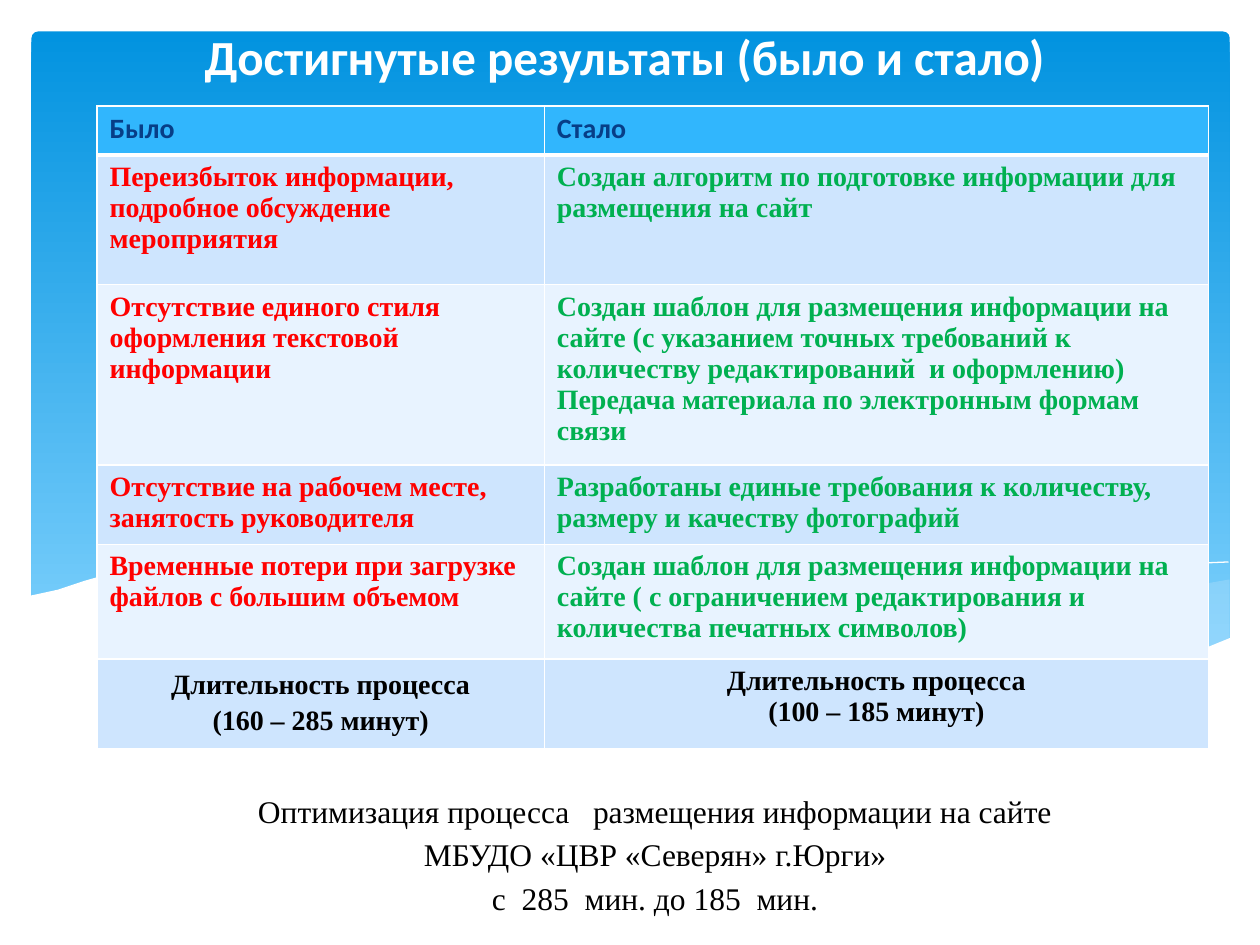
from collections import namedtuple

from lxml.etree import SubElement
from pptx import Presentation
from pptx.dml.color import RGBColor
from pptx.enum.shapes import MSO_SHAPE
from pptx.enum.text import MSO_ANCHOR, PP_ALIGN
from pptx.oxml import parse_xml
from pptx.oxml.ns import nsdecls, qn
from pptx.util import Inches, Pt

Box = namedtuple("Box", "left top width height")

SLIDE_WIDTH, SLIDE_HEIGHT = Inches(10), Inches(7.5)
GRID = SLIDE_WIDTH / 100
SERIF, SANS = "Times New Roman", "Calibri"
WHITE, BLACK, RED, GREEN, NAVY = "FFFFFF", "000000", "FF0000", "00B050", "073E87"
HEADER_FILL, ROW_FILLS = "31B6FD", ("CEE5FE", "E8F3FF")

RIGHT_WAVE = [(95, 43.5), (91, 44.2), (83.6, 45.8), (72.8, 48.3), (63.6, 50),
              (70.7, 50.9), (78.9, 51.3), (87.2, 50.5), (92.4, 49.2), (95.1, 48.2),
              (95.1, 43.5)]
MIDDLE_WAVE = [(86.8, 50.8), (78.2, 49.5), (68.1, 47.5), (60.4, 45.7), (50.3, 43.5),
               (41.7, 42.4), (33.6, 42.1), (26.1, 42.7), (33.7, 43.8), (42.4, 45.7),
               (54.1, 48.4), (62.5, 49.9), (71.1, 50.8), (78.2, 51.4), (83.2, 51.2)]
FALLING_LINE = [(28.4, 43.1), (33.8, 42.3), (40.8, 42.2), (48.5, 42.9), (58.3, 44.3),
                (70.2, 46.1), (80.6, 48.6), (88.2, 50.7)]
RISING_LINE = [(58.8, 49.2), (67, 47.1), (78.1, 44.5), (85.6, 43.1), (92.6, 42.2),
               (95, 42.1)]
WHITE_WAVE = [(95.2, 48.1), (92.5, 49.2), (88.5, 50.2), (83.8, 50.9), (78.4, 51.2),
              (71.9, 50.9), (64.3, 50), (55.4, 48.5), (42.2, 45.5), (34, 43.7),
              (26.7, 42.6), (20.5, 42), (15.2, 41.9), (10.7, 42.1), (7, 42.8),
              (4.2, 43.6), (2.1, 44.3), (-0.2, 44.8), (-0.2, 56.4), (95.2, 56.4)]

COMPARISON = [
    ("Переизбыток информации, подробное обсуждение мероприятия",
     "Создан алгоритм по подготовке информации для размещения на сайт"),
    ("Отсутствие единого стиля оформления текстовой информации",
     "Создан шаблон для размещения информации на сайте (с указанием точных требований "
     "к количеству редактирований  и оформлению) Передача материала по электронным "
     "формам связи"),
    ("Отсутствие на рабочем месте,  занятость руководителя",
     "Разработаны единые требования к количеству, размеру и качеству фотографий"),
    ("Временные потери при загрузке  файлов с большим объемом",
     "Создан шаблон для размещения информации на сайте ( с ограничением редактирования "
     "и количества печатных символов)"),
]
DURATIONS = ("Длительность процесса\n(160 – 285 минут)",
             "Длительность процесса\n(100 – 185 минут)")
CONCLUSION = ("Оптимизация процесса   размещения информации на сайте\n"
              "МБУДО «ЦВР «Северян» г.Юрги»\n"
              "с  285  мин. до 185  мин.")


def rgb(color):
    return RGBColor.from_string(color)


def units(count):
    return round(count * GRID)


def write(frame, text, size, font, color, bold=False, align=PP_ALIGN.LEFT, spacing=None):
    frame.text = text
    frame.word_wrap = True
    for paragraph in frame.paragraphs:
        paragraph.alignment = align
        paragraph.line_spacing = spacing
        paragraph.font.size = Pt(size)
        paragraph.font.name = font
        paragraph.font.bold = bold
        paragraph.font.color.rgb = rgb(color)


def add_wave(slide, box, points, fill=None, opacity=100):
    (start, *rest) = [(units(box.left + x), units(box.top + y)) for x, y in points]
    builder = slide.shapes.build_freeform(*start)
    builder.add_line_segments(rest, close=fill is not None)
    wave = builder.convert_to_shape()
    wave.shadow.inherit = False
    if fill is None:
        wave.fill.background()
        wave.line.color.rgb = rgb(WHITE)
        wave.line.width = Pt(0)
        return
    wave.line.fill.background()
    wave.fill.solid()
    wave.fill.fore_color.rgb = rgb(fill)
    if opacity < 100:
        color = wave.fill._xPr.find(qn("a:solidFill"))[0]
        SubElement(color, qn("a:alpha"), val=str(opacity * 1000))


def add_backdrop(slide, box):
    panel = slide.shapes.add_shape(MSO_SHAPE.ROUNDED_RECTANGLE, *map(units, box))
    panel.adjustments[0] = 0.01
    panel.shadow.inherit = False
    panel.line.fill.background()
    panel.fill.gradient()
    panel.fill.gradient_angle = 270
    for stop, color, position in zip(panel.fill.gradient_stops, ("0293E0", "83D3FE"), (0, 1)):
        stop.color.rgb = rgb(color)
        stop.position = position
    add_wave(slide, box, RIGHT_WAVE, "C6E7FC", 29)
    add_wave(slide, box, MIDDLE_WAVE, "C6E7FC", 40)
    add_wave(slide, box, FALLING_LINE)
    add_wave(slide, box, RISING_LINE)
    add_wave(slide, box, WHITE_WAVE, WHITE)


def place_title(slide, box):
    title = slide.shapes.title
    title.left, title.top, title.width, title.height = map(units, box)
    write(title.text_frame, "Достигнутые результаты (было и стало) ", 28, SANS, WHITE,
          bold=True, align=PP_ALIGN.CENTER)
    title.text_frame.vertical_anchor = MSO_ANCHOR.MIDDLE
    title._element.getparent().append(title._element)


def format_cell(cell, fill, bottom_width):
    cell.fill.solid()
    cell.fill.fore_color.rgb = rgb(fill)
    properties = cell._tc.get_or_add_tcPr()
    for index, side in enumerate("LRTB"):
        width = Pt(bottom_width if side == "B" else 1)
        properties.insert(index, parse_xml(
            f'<a:ln{side} {nsdecls("a")} w="{width}"><a:solidFill>'
            f'<a:srgbClr val="{WHITE}"/></a:solidFill></a:ln{side}>'))


def add_comparison(slide, box):
    row_shares = (3.9, 10.3, 14.3, 6.3, 9.1, 7.1)
    column_shares = (35.5, 52.7)
    contents = [("Было", "Стало"), *COMPARISON, DURATIONS]
    table = slide.shapes.add_table(len(contents), 2, *map(units, box)).table
    for column, share in zip(table.columns, column_shares):
        column.width = units(box.width * share / sum(column_shares))
    last = len(contents) - 1
    for index, (texts, share) in enumerate(zip(contents, row_shares)):
        table.rows[index].height = units(box.height * share / sum(row_shares))
        for side, text in enumerate(texts):
            cell = table.cell(index, side)
            font, color, fill = SERIF, (RED, GREEN)[side], ROW_FILLS[(index - 1) % 2]
            align, spacing = PP_ALIGN.LEFT, None
            if index == 0:
                font, color, fill = SANS, NAVY, HEADER_FILL
            elif index == last:
                color, align, spacing = BLACK, PP_ALIGN.CENTER, (1.15, None)[side]
            write(cell.text_frame, text, 16, font, color, True, align, spacing)
            format_cell(cell, fill, 3 if index == 0 else 1)


def add_conclusion(slide, box):
    conclusion = slide.shapes.add_textbox(*map(units, box))
    write(conclusion.text_frame, CONCLUSION, 18, SERIF, BLACK,
          align=PP_ALIGN.CENTER, spacing=1.15)


def main():
    presentation = Presentation()
    presentation.slide_width, presentation.slide_height = SLIDE_WIDTH, SLIDE_HEIGHT
    slide = presentation.slides.add_slide(presentation.slide_layouts[5])
    add_backdrop(slide, Box(2.5, 2.5, 95.1, 51.8))
    place_title(slide, Box(2.7, 1.3, 94.6, 6.3))
    add_comparison(slide, Box(7.7, 8.4, 88.2, 51))
    add_conclusion(slide, Box(6.7, 61.9, 90.6, 11.5))
    presentation.save("out.pptx")


if __name__ == "__main__":
    main()
